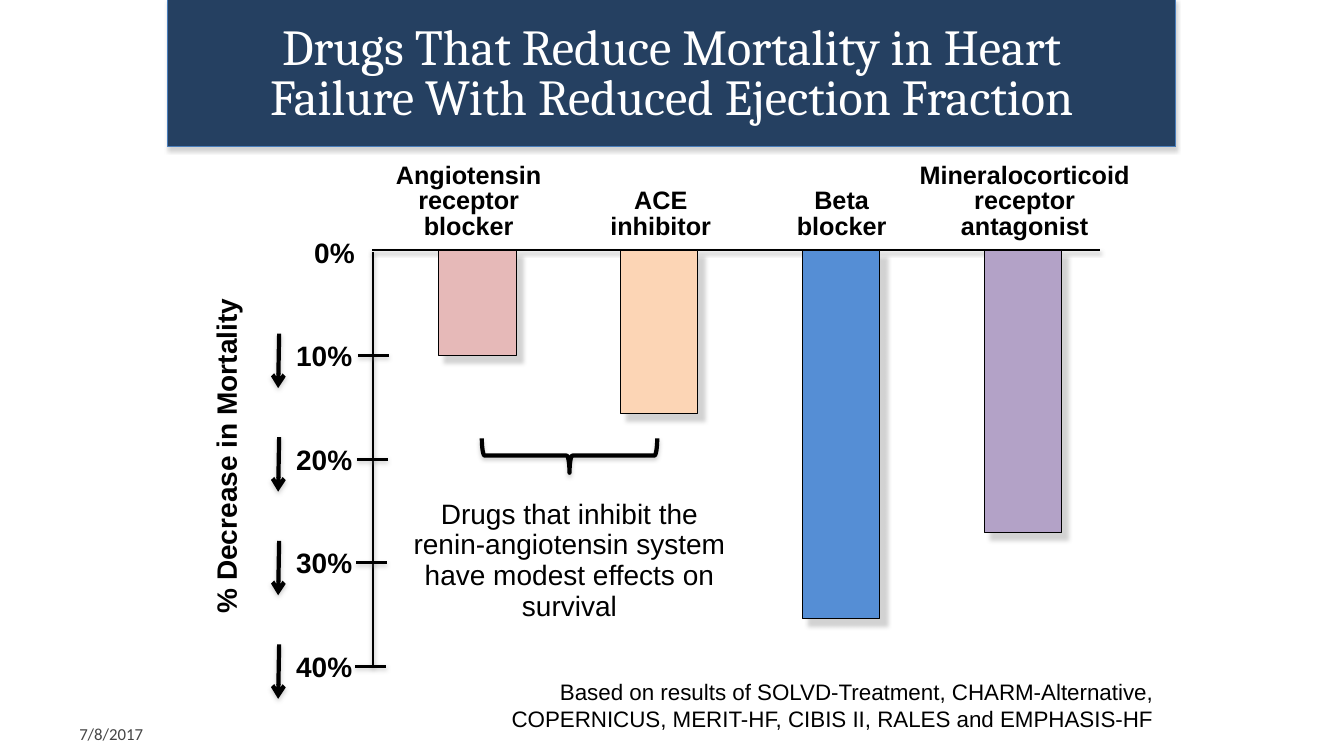
import pptx
import pptx.util
import pptx.dml.color
import pptx.enum.shapes
import pptx.enum.text
import pptx.oxml
import pptx.oxml.ns

Pt = pptx.util.Pt
RGBColor = pptx.dml.color.RGBColor
SHAPE = pptx.enum.shapes.MSO_SHAPE
ALIGN = pptx.enum.text.PP_ALIGN
ANCHOR = pptx.enum.text.MSO_ANCHOR

NAVY = RGBColor(0x25, 0x40, 0x61)
BANNER_EDGE = RGBColor(0x4A, 0x7E, 0xBB)
WHITE = RGBColor(0xFF, 0xFF, 0xFF)
BLACK = RGBColor(0, 0, 0)
DATE_GRAY = RGBColor(0x45, 0x45, 0x45)
PINK = RGBColor(0xE6, 0xB9, 0xB8)
PEACH = RGBColor(0xFC, 0xD5, 0xB5)
BLUE = RGBColor(0x55, 0x8E, 0xD5)
PURPLE = RGBColor(0xB3, 0xA2, 0xC7)

# Drug class, % decrease in mortality, colour, label centre from the chart's left, label width
DRUGS = [
    ("Angiotensin\nreceptor\nblocker", 10, PINK, 68.4, 120),
    ("ACE\ninhibitor", 15.6, PEACH, 205.6, 88),
    ("Beta\nblocker", 35.4, BLUE, 334.8, 80),
    ("Mineralocorticoid\nreceptor\nantagonist", 27.1, PURPLE, 465.5, 168),
]


def cast_shadow(shape, alpha=38, distance=1.6, angle=90):
    shape.element.spPr.append(pptx.oxml.parse_xml(
        f'<a:effectLst {pptx.oxml.ns.nsdecls("a")}>'
        f'<a:outerShdw blurRad="{Pt(3.1)}" dist="{Pt(distance)}" '
        f'dir="{angle * 60000}" rotWithShape="0"><a:srgbClr val="808080">'
        f'<a:alpha val="{alpha * 1000}"/></a:srgbClr></a:outerShdw></a:effectLst>'))


def add_text(slide, box, text, size, bold=False, align=ALIGN.CENTER, spacing=None,
             wrap=False, font="Arial", color=BLACK):
    shape = slide.shapes.add_textbox(*map(Pt, box))
    frame = shape.text_frame
    frame.text = text
    frame.word_wrap = wrap
    frame.auto_size = pptx.enum.text.MSO_AUTO_SIZE.SHAPE_TO_FIT_TEXT
    for paragraph in frame.paragraphs:
        paragraph.alignment = align
        if spacing:
            paragraph.line_spacing = Pt(spacing)
        for run in paragraph.runs:
            run.font.name = font
            run.font.size = Pt(size)
            run.font.bold = bold
            run.font.color.rgb = color
    return shape


def add_rectangle(slide, box, fill, edge):
    shape = slide.shapes.add_shape(SHAPE.RECTANGLE, *map(Pt, box))
    shape.fill.solid()
    shape.fill.fore_color.rgb = fill
    shape.line.color.rgb = edge
    shape.line.width = Pt(0.75)
    return shape


def add_line(slide, start, end, width=2, arrow=False):
    connector = slide.shapes.add_connector(
        pptx.enum.shapes.MSO_CONNECTOR.STRAIGHT, *map(Pt, start + end))
    connector.line.color.rgb = BLACK
    connector.line.width = Pt(width)
    if arrow:
        connector.element.spPr.get_or_add_ln().append(pptx.oxml.parse_xml(
            f'<a:tailEnd {pptx.oxml.ns.nsdecls("a")} type="arrow"/>'))
    cast_shadow(connector)


def add_banner(slide, box):
    left, top, width, height = box
    cast_shadow(add_rectangle(slide, box, NAVY, BANNER_EDGE), 35, 1.8)
    add_text(slide, (left + 29.8, top + 14.4, width - 60, height - 23.8),
             "Drugs That Reduce Mortality in Heart Failure With Reduced Ejection Fraction",
             36, spacing=36, wrap=True, font="Cambria", color=WHITE)


def add_mortality_chart(slide, box):
    left, top, width, height = box
    step = height / 4
    baseline = top - 1.4

    # Axes
    add_line(slide, (left - 0.5, baseline), (left + width, baseline))
    add_line(slide, (left, top), (left, top + height))

    # Scale with ticks and downward arrows
    add_text(slide, (left - 49, top - 15.4, 44, 31.7), "0%", 20, True, ALIGN.LEFT)
    for index in range(1, 5):
        tick = top + index * step
        tick_left = left - 10 - 0.7 * index
        add_line(slide, (tick_left, tick), (tick_left + 22.3, tick))
        add_text(slide, (left - 61.9, tick - 15.7, 54.7, 31.7), f"{index * 10}%",
                 20, True, ALIGN.LEFT)
        add_line(slide, (left - 67, tick - 15.7), (left - 67.7, tick + 23.2), 3, True)

    # Axis title
    title = add_text(slide, (left - 249.8, top + 133.2, 295.2, 25.2),
                     "% Decrease in Mortality", 20, True, spacing=18, wrap=True)
    title.rotation = 270

    # Hanging bars and their labels
    for index, (name, decrease, color, center, label_width) in enumerate(DRUGS):
        bar_box = (left + 46.8 + 129.9 * index, baseline, 55.5,
                   decrease / 10 * step + top - baseline)
        cast_shadow(add_rectangle(slide, bar_box, color, BLACK), 35, 6.8, 48)
        label_height = 18 * (name.count("\n") + 1) + 8
        add_text(slide, (left + center - label_width / 2, top - 4 - label_height,
                         label_width, label_height), name, 18, True, spacing=18)


def add_brace_note(slide, box):
    left, top, width, height = box
    brace_width, brace_length = 24.5, 125.3
    brace = slide.shapes.add_shape(
        SHAPE.RIGHT_BRACE, Pt(left + (width - brace_width) / 2),
        Pt(top + (brace_width - brace_length) / 2), Pt(brace_width), Pt(brace_length))
    brace.rotation = 90
    brace.fill.background()
    brace.line.color.rgb = BLACK
    brace.line.width = Pt(3)
    cast_shadow(brace)
    add_text(slide, (left, top + 39.6, width, height - 39.6),
             "Drugs that inhibit the renin-angiotensin system have modest effects on survival",
             20, spacing=22, wrap=True)


def add_footer(slide, box):
    left, top, width, height = box
    add_text(slide, (left + width - 474.5, top, 474.5, 46),
             "Based on results of SOLVD-Treatment, CHARM-Alternative,\n"
             "COPERNICUS, MERIT-HF, CIBIS II, RALES and EMPHASIS-HF",
             16, align=ALIGN.RIGHT)
    date = add_text(slide, (left, top + height - 21.6, 224, 21.6), "7/8/2017", 12,
                    align=ALIGN.LEFT, wrap=True, font="Calibri", color=DATE_GRAY)
    frame = date.text_frame
    frame.auto_size = pptx.enum.text.MSO_AUTO_SIZE.NONE
    frame.vertical_anchor = ANCHOR.BOTTOM
    frame.margin_left, frame.margin_top = Pt(8.64), Pt(3.6)
    frame.margin_right, frame.margin_bottom = Pt(3.6), Pt(0)


def main():
    presentation = pptx.Presentation()
    presentation.slide_width = Pt(960)
    presentation.slide_height = Pt(540)
    slide = presentation.slides.add_slide(presentation.slide_layouts[6])
    add_banner(slide, (120, 0, 720, 105))
    add_mortality_chart(slide, (266.4, 180, 519, 296))
    add_brace_note(slide, (288, 313.2, 237.6, 136))
    add_footer(slide, (48, 481, 783, 50.4))
    presentation.save("out.pptx")


if __name__ == "__main__":
    main()
